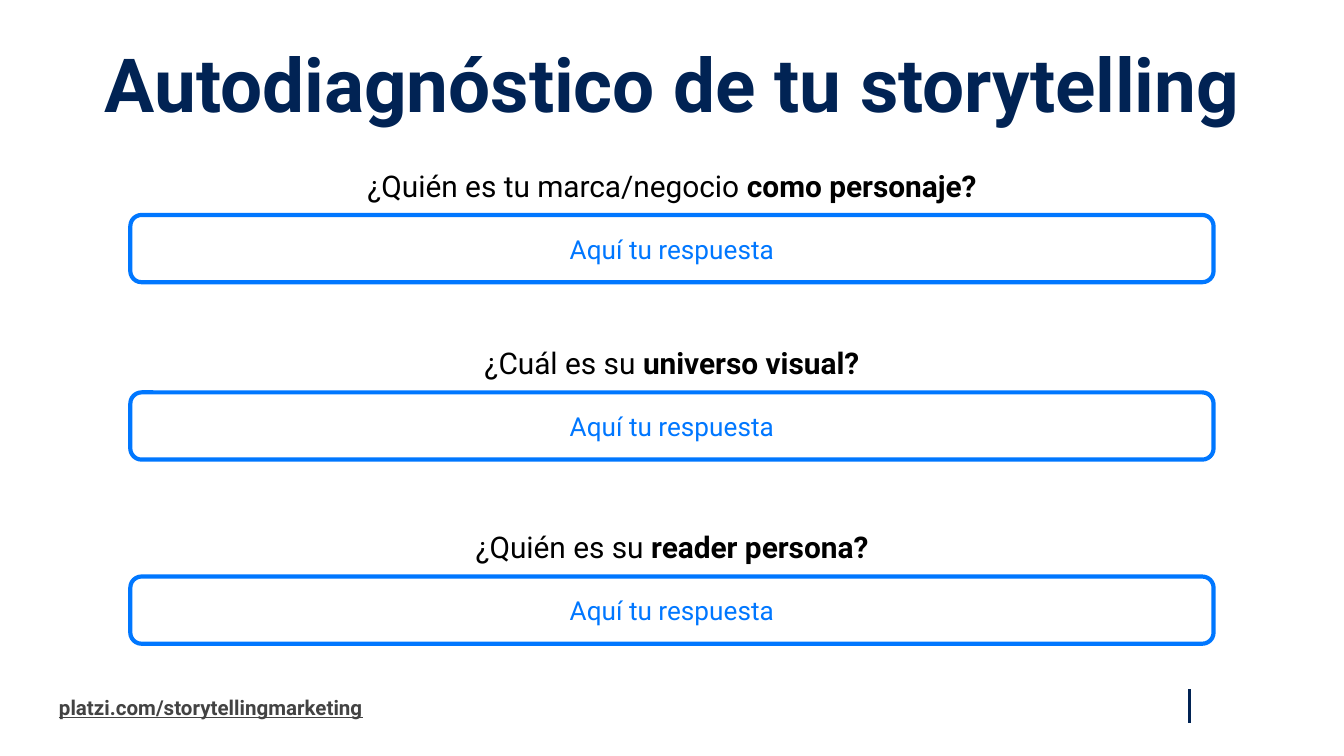
from lxml.etree import SubElement
from pptx import Presentation
from pptx.dml.color import RGBColor
from pptx.enum.shapes import MSO_CONNECTOR, MSO_SHAPE
from pptx.enum.text import MSO_ANCHOR, PP_ALIGN
from pptx.oxml.ns import qn
from pptx.util import Inches, Pt

NAVY = RGBColor(0x01, 0x23, 0x54)
BLUE = RGBColor(0x00, 0x77, 0xFF)
GRAY = RGBColor(0x43, 0x43, 0x43)
BLACK = RGBColor(0x00, 0x00, 0x00)
FONT = "Roboto"
QUESTIONS = [
    (1.60, 7.79, "¿Quién es tu marca/negocio ", "como personaje?"),
    (2.92, 3.36, "¿Cuál es su ", "universo visual?"),
    (4.29, 3.79, "¿Quién es su ", "reader persona?"),
]


def write_text(shape, parts, size, color, align=PP_ALIGN.CENTER, anchor=MSO_ANCHOR.MIDDLE):
    """Fill a shape with one paragraph of (text, bold) parts and return it."""
    frame = shape.text_frame
    frame.word_wrap = True
    frame.vertical_anchor = anchor
    frame.margin_left = frame.margin_right = Inches(0.1)
    frame.margin_top = frame.margin_bottom = Inches(0.1)
    para = frame.paragraphs[0]
    para.alignment = align
    para.font.name = FONT
    para.font.size = Pt(size)
    para.font.color.rgb = color
    for text, bold in parts:
        span = para.add_run()
        span.text = text
        span.font.bold = bold
    return para


def add_title(page, left, top, width, height):
    """Place the slide heading."""
    box = page.shapes.add_textbox(Inches(left), Inches(top), Inches(width), Inches(height))
    para = write_text(box, [("Autodiagnóstico de tu storytelling", True)], 40, NAVY,
                      anchor=MSO_ANCHOR.TOP)
    para.line_spacing = 0.8


def add_question(page, left, top, width, height, label_width, lead, emphasis):
    """Place an answer field with its question centred above it."""
    field = page.shapes.add_shape(MSO_SHAPE.ROUNDED_RECTANGLE, Inches(left), Inches(top),
                                  Inches(width), Inches(height))
    field.shadow.inherit = False
    field.fill.background()
    field.line.color.rgb = BLUE
    field.line.width = Pt(2.25)
    write_text(field, [("Aquí tu respuesta", False)], 14, BLUE)
    label_left = left + (width - label_width) / 2
    label = page.shapes.add_textbox(Inches(label_left), Inches(top - 0.47),
                                    Inches(label_width), Inches(0.5))
    write_text(label, [(lead, False), (emphasis, True)], 16, BLACK)


def add_footer(page, left, top, width, height):
    """Place the course address and the vertical rule at the right."""
    address = page.shapes.add_textbox(Inches(left), Inches(top), Inches(3.11), Inches(height))
    para = write_text(address, [("platzi.com/storytellingmarketing", True)], 11, GRAY,
                      PP_ALIGN.LEFT)
    para.font.underline = True
    right = Inches(left + width)
    rule = page.shapes.add_connector(MSO_CONNECTOR.STRAIGHT, right, Inches(top + 0.04),
                                     right, Inches(top + 0.29))
    rule.line.color.rgb = NAVY
    rule.line.width = Pt(1.5)
    SubElement(rule._element.spPr, qn("a:effectLst"))


def main():
    """Build and save the deck."""
    deck = Presentation()
    deck.slide_width = Inches(10)
    deck.slide_height = Inches(10) * 9 // 16
    page = deck.slides.add_slide(deck.slide_layouts[6])
    add_footer(page, 0.34, 5.09, 8.51, 0.34)
    add_title(page, 0.34, 0.31, 9.32, 0.63)
    for top, label_width, lead, emphasis in QUESTIONS:
        add_question(page, 0.97, top, 8.06, 0.5, label_width, lead, emphasis)
    deck.save("out.pptx")


if __name__ == "__main__":
    main()
